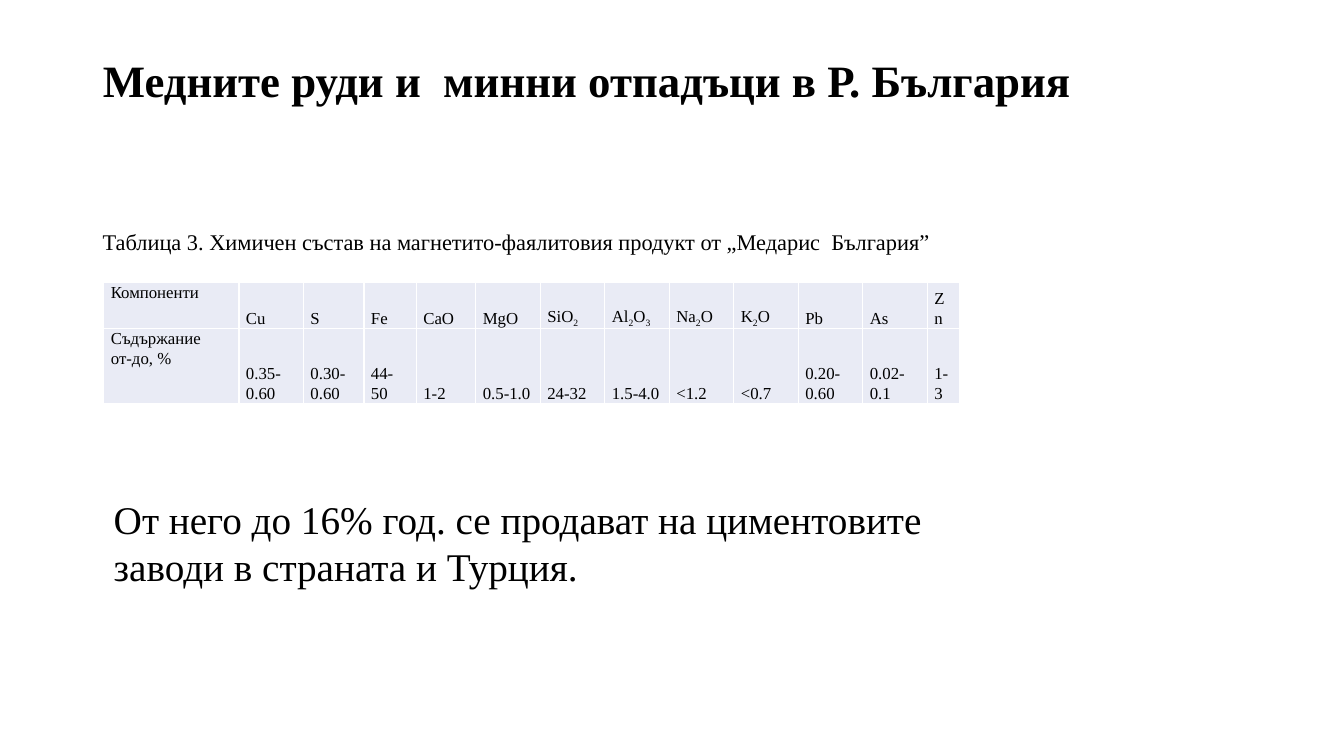
from dataclasses import dataclass
from itertools import groupby

from lxml import etree
from pptx import Presentation
from pptx.dml.color import RGBColor
from pptx.enum.text import MSO_ANCHOR, MSO_AUTO_SIZE, PP_ALIGN
from pptx.oxml.ns import qn
from pptx.util import Inches, Pt

TOP, MIDDLE, BOTTOM = MSO_ANCHOR.TOP, MSO_ANCHOR.MIDDLE, MSO_ANCHOR.BOTTOM
NO_FIT, GROW = MSO_AUTO_SIZE.NONE, MSO_AUTO_SIZE.SHAPE_TO_FIT_TEXT
LEFT = PP_ALIGN.LEFT

FONT = "Times New Roman"
INK, CELL_FILL, GRID = "000000", "E9EBF5", "FFFFFF"
TITLE_ONLY = 5


@dataclass
class Component:
    formula: str
    content: str
    width: float = 0.64


@dataclass
class Caption:
    text: str
    left: float
    top: float
    height: float
    size: float


LABELS = Component("Компоненти", "Съдържание\nот-до, %", 1.34)
COMPONENTS = [
    LABELS,
    Component("Cu", "0.35-0.60"),
    Component("S", "0.30-0.60", 0.6),
    Component("Fe", "44-50", 0.52),
    Component("CaO", "1-2", 0.59),
    Component("MgO", "0.5-1.0"),
    Component("SiO2", "24-32"),
    Component("Al2O3", "1.5-4.0"),
    Component("Na2O", "<1.2"),
    Component("K2O", "<0.7"),
    Component("Pb", "0.20-0.60"),
    Component("As", "0.02-0.1"),
    Component("Zn", "1-3", 0.32),
]
ROW_HEIGHTS = [0.46, 0.74]
TABLE_LEFT, TABLE_TOP, TABLE_WIDTH = 1.03, 2.8, 8.47
CAPTIONS = [
    Caption("Таблица 3. Химичен състав на магнетито-фаялитовия продукт от „Медарис  България”",
            0.92, 2.21, 0.37, 16),
    Caption("От него до 16% год. се продават на циментовите заводи в страната и Турция.",
            1.03, 4.86, 1.04, 28),
]


def color(value: str) -> RGBColor:
    return RGBColor.from_string(value)


def apply(target, values: dict) -> None:
    for name, value in values.items():
        setattr(target, name, value)


def add_span(para, text: str, size: float, bold: bool = False):
    span = para.add_run()
    span.text = text
    apply(span.font, {"name": FONT, "size": Pt(size), "bold": bold})
    span.font.color.rgb = color(INK)
    return span


def add_title(page, text: str) -> None:
    box = page.shapes.title
    apply(box, {"left": Inches(0.92), "top": Inches(0.4),
                "width": Inches(11.5), "height": Inches(0.84)})
    frame = box.text_frame
    apply(frame, {"vertical_anchor": MIDDLE, "auto_size": NO_FIT, "word_wrap": True})
    para = frame.paragraphs[0]
    apply(para, {"alignment": LEFT, "line_spacing": 0.9})
    add_span(para, text, 32, bold=True)


def add_caption(page, caption: Caption) -> None:
    box = page.shapes.add_textbox(Inches(caption.left), Inches(caption.top),
                                  Inches(TABLE_WIDTH), Inches(caption.height))
    apply(box.text_frame, {"word_wrap": True, "auto_size": GROW})
    add_span(box.text_frame.paragraphs[0], caption.text, caption.size)


def add_borders(cell) -> None:
    properties = cell._tc.get_or_add_tcPr()
    for side in ("a:lnL", "a:lnR", "a:lnT", "a:lnB"):
        line = etree.SubElement(properties, qn(side), w=str(Pt(1)))
        fill = etree.SubElement(line, qn("a:solidFill"))
        etree.SubElement(fill, qn("a:srgbClr"), val=GRID)


def fill_cell(cell, text: str, anchor, is_formula: bool) -> None:
    add_borders(cell)
    cell.fill.solid()
    cell.fill.fore_color.rgb = color(CELL_FILL)
    apply(cell, {"margin_left": Inches(0.07), "margin_right": Inches(0.07),
                 "margin_top": 0, "margin_bottom": 0, "vertical_anchor": anchor})
    frame = cell.text_frame
    for index, line in enumerate(text.split("\n")):
        para = frame.add_paragraph() if index else frame.paragraphs[0]
        para.line_spacing = 1.07
        if not is_formula:
            add_span(para, line, 12)
            continue
        # Digits in a formula are subscripts
        for is_digit, letters in groupby(line, str.isdigit):
            span = add_span(para, "".join(letters), 12)
            if is_digit:
                span._r.get_or_add_rPr().set("baseline", "-25000")


def add_composition(page) -> None:
    table = page.shapes.add_table(
        len(ROW_HEIGHTS), len(COMPONENTS), Inches(TABLE_LEFT), Inches(TABLE_TOP),
        Inches(TABLE_WIDTH), Inches(sum(ROW_HEIGHTS))).table
    apply(table, {"first_row": False, "horz_banding": False})
    for row, height in zip(table.rows, ROW_HEIGHTS):
        row.height = Inches(height)
    for index, component in enumerate(COMPONENTS):
        table.columns[index].width = Inches(component.width)
        anchor = TOP if component is LABELS else BOTTOM
        fill_cell(table.cell(0, index), component.formula, anchor, True)
        fill_cell(table.cell(1, index), component.content, anchor, False)


def main() -> None:
    deck = Presentation()
    apply(deck, {"slide_width": Inches(13.33), "slide_height": Inches(7.5)})
    page = deck.slides.add_slide(deck.slide_layouts[TITLE_ONLY])

    # Heading
    add_title(page, "Медните руди и  минни отпадъци в Р. България")

    # Table of contents by component
    add_composition(page)

    # Table caption and closing remark
    for caption in CAPTIONS:
        add_caption(page, caption)

    deck.save("out.pptx")


if __name__ == "__main__":
    main()
